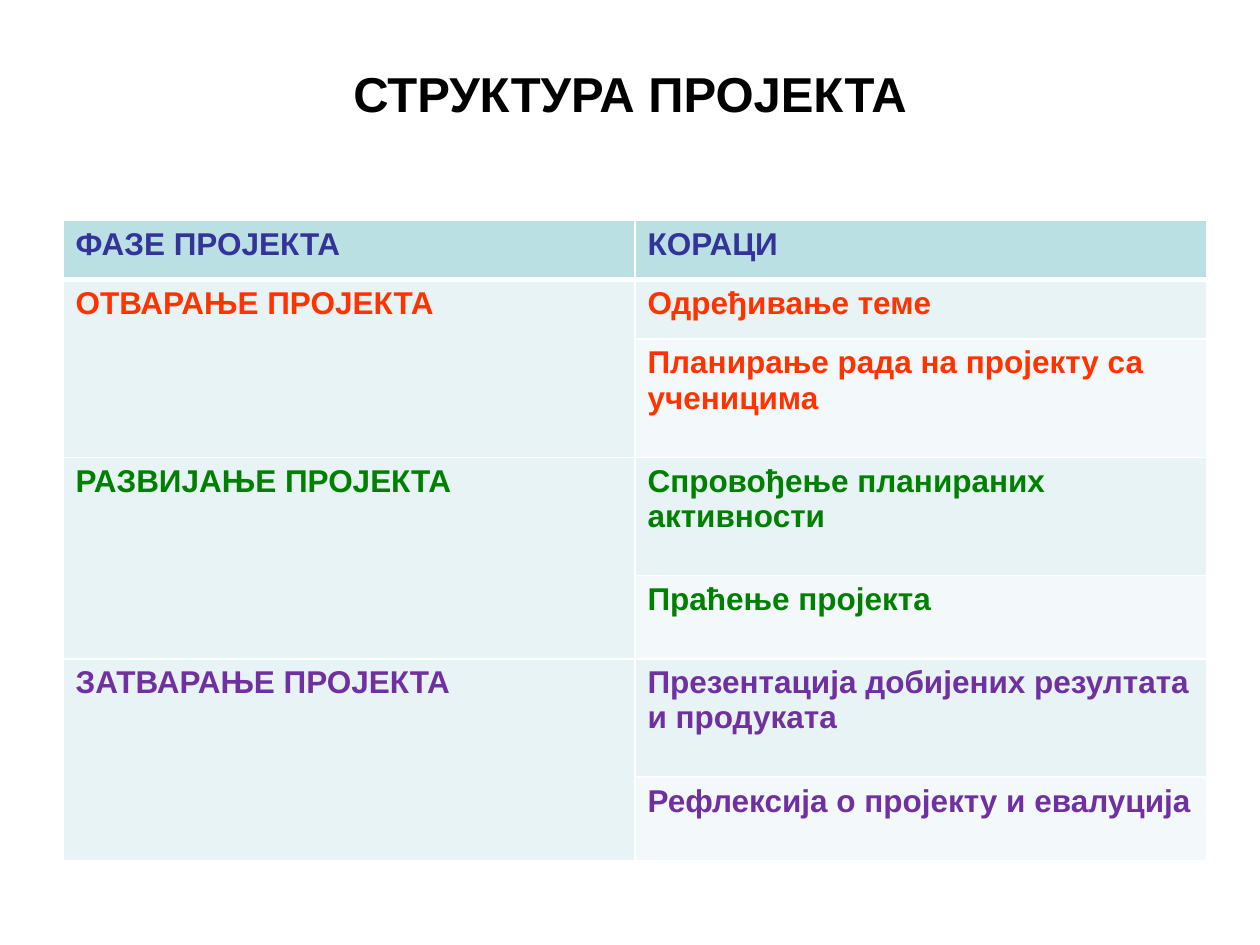
from typing import NamedTuple

from lxml import etree
from pptx import Presentation, util as u
from pptx.dml import color
from pptx.enum import text
from pptx.oxml import ns

WIDTH, HEIGHT = 10, 7.5
FONT = "Arial"
WHITE, HEADER_FILL, FIRST_FILL, SECOND_FILL = "FFFFFF", "BBE0E3", "E7F3F4", "F3F9FA"
ONE_LINE, SPACED_LINE, TWO_LINES = 0.47, 0.66, 0.94


class Step(NamedTuple):
    """A step of the project and the height of its row."""
    label: str
    height: float


class Phase(NamedTuple):
    """A project phase with its colour and steps."""
    label: str
    colour: str
    steps: tuple[Step, ...]


HEADINGS = ("ФАЗЕ ПРОЈЕКТА", "КОРАЦИ")
PHASES = (
    Phase("ОТВАРАЊЕ ПРОЈЕКТА", "FF3300", (
        Step("Одређивање теме", ONE_LINE),
        Step("Планирање рада на пројекту са ученицима", TWO_LINES))),
    Phase("РАЗВИЈАЊЕ ПРОЈЕКТА", "008000", (
        Step("Спровођење планираних активности", TWO_LINES),
        Step("Праћење пројекта", SPACED_LINE))),
    Phase("ЗАТВАРАЊЕ ПРОЈЕКТА", "7030A0", (
        Step("Презентација добијених резултата и продуката", TWO_LINES),
        Step("Рефлексија о пројекту и евалуција", SPACED_LINE))),
)


def rgb(value: str) -> color.RGBColor:
    """Turn a hex string into a colour."""
    return color.RGBColor.from_string(value)


def write(frame, label: str, size: float, colour: str) -> None:
    """Fill a text frame with one bold line of text."""
    frame.text = label
    font = frame.paragraphs[0].runs[0].font
    font.name, font.size, font.bold = FONT, u.Pt(size), True
    font.color.rgb = rgb(colour)


def style_cell(cell, fill: str, bottom: float = 1) -> None:
    """Give a cell white borders and a solid fill."""
    properties = cell._tc.get_or_add_tcPr()
    for side, width in zip("LRTB", (1, 1, 1, bottom)):
        line = etree.SubElement(properties, ns.qn(f"a:ln{side}"), w=str(u.Pt(width)))
        solid = etree.SubElement(line, ns.qn("a:solidFill"))
        etree.SubElement(solid, ns.qn("a:srgbClr"), val=WHITE)
    cell.fill.solid()
    cell.fill.fore_color.rgb = rgb(fill)


def add_title(slide, label: str) -> None:
    """Place and format the slide title."""
    title = slide.shapes.title
    title.left, title.top = u.Inches(0.05 * WIDTH), u.Inches(0.04 * HEIGHT)
    title.width, title.height = u.Inches(0.9 * WIDTH), u.Inches(0.87)
    write(title.text_frame, label, 28, "000000")
    title.text_frame.vertical_anchor = text.MSO_ANCHOR.MIDDLE
    title.text_frame.paragraphs[0].alignment = text.PP_ALIGN.CENTER


def add_phase_table(slide) -> None:
    """Draw the phases, each merged beside its steps."""
    heights = [ONE_LINE] + [step.height for phase in PHASES for step in phase.steps]
    table = slide.shapes.add_table(
        len(heights), len(HEADINGS), u.Inches(0.05 * WIDTH), u.Inches(1.75),
        u.Inches(9.08), u.Inches(sum(heights))).table
    for row, height in zip(table.rows, heights):
        row.height = u.Inches(height)
    for column, heading in enumerate(HEADINGS):
        cell = table.cell(0, column)
        write(cell.text_frame, heading, 18, "333399")
        style_cell(cell, HEADER_FILL, bottom=3)
    top = 1
    for phase in PHASES:
        phase_cell = table.cell(top, 0)
        phase_cell.merge(table.cell(top + len(phase.steps) - 1, 0))
        write(phase_cell.text_frame, phase.label, 18, phase.colour)
        for row, (step, fill) in enumerate(zip(phase.steps, (FIRST_FILL, SECOND_FILL)), top):
            style_cell(table.cell(row, 0), FIRST_FILL)
            step_cell = table.cell(row, 1)
            write(step_cell.text_frame, step.label, 18, phase.colour)
            style_cell(step_cell, fill)
        top += len(phase.steps)


def main() -> None:
    """Build and save the presentation."""
    presentation = Presentation()
    presentation.slide_width, presentation.slide_height = u.Inches(WIDTH), u.Inches(HEIGHT)
    slide = presentation.slides.add_slide(presentation.slide_layouts[5])
    add_title(slide, "СТРУКТУРА ПРОЈЕКТА")
    add_phase_table(slide)
    presentation.save("out.pptx")


if __name__ == "__main__":
    main()
